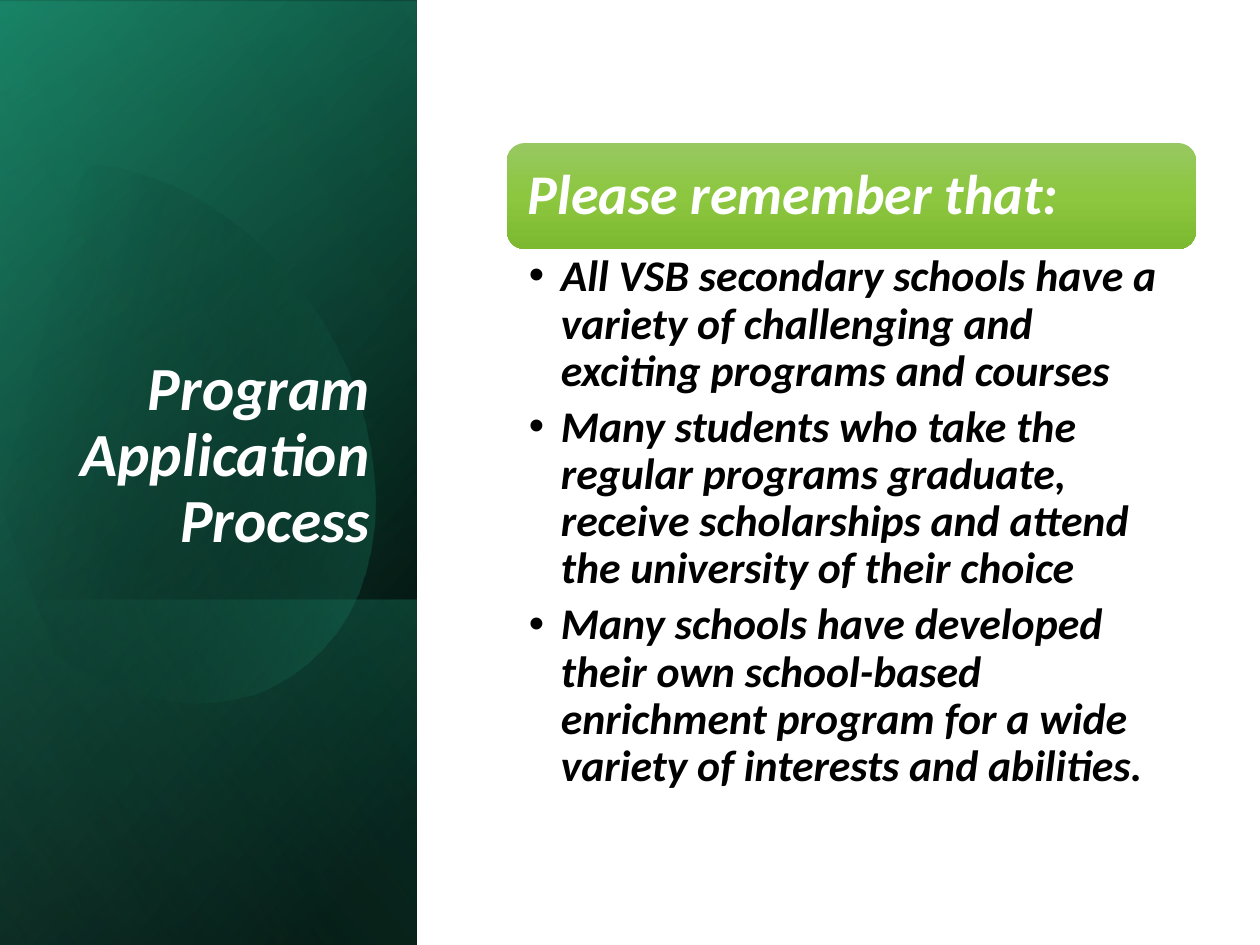
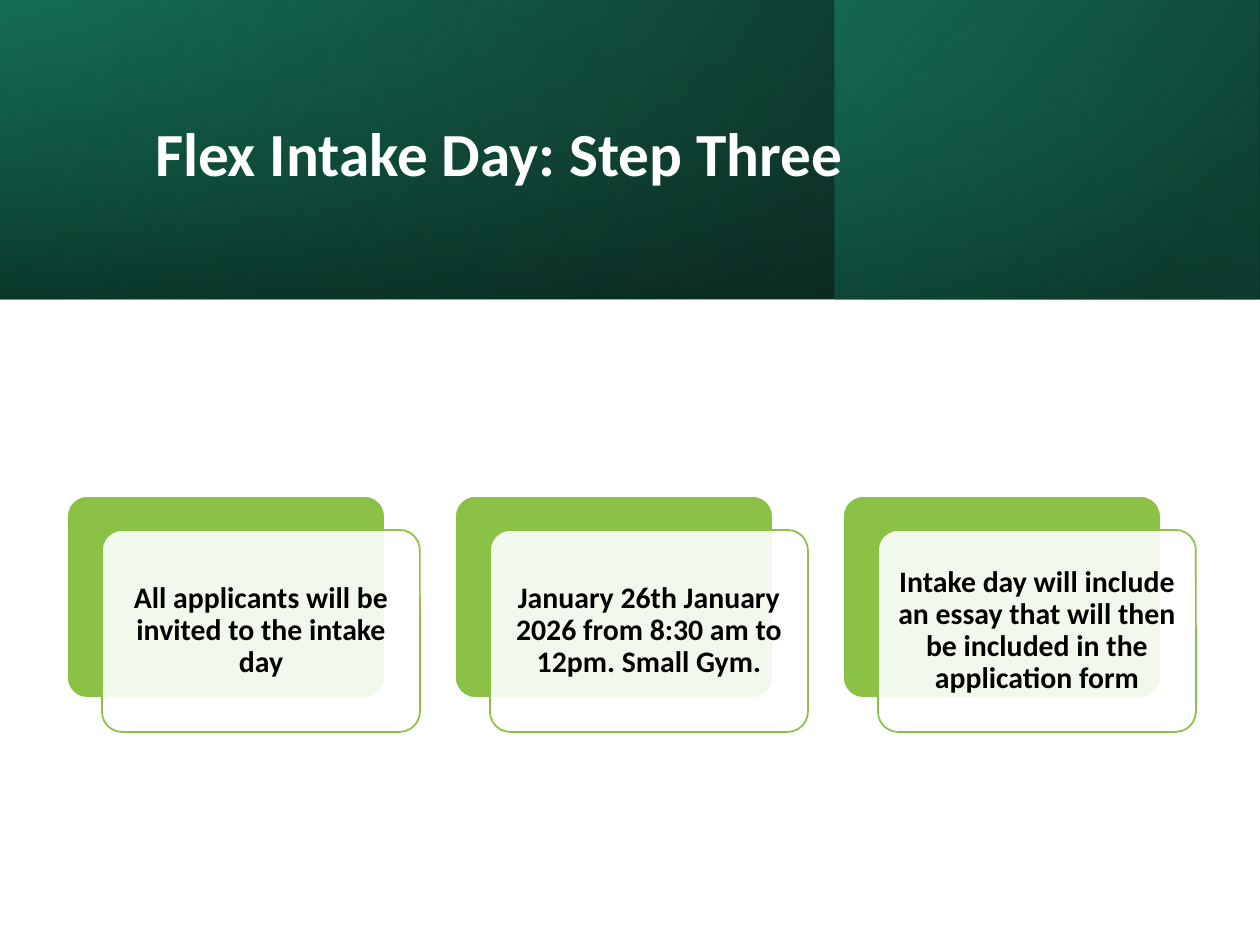
from lxml.etree import SubElement
from pptx import Presentation
from pptx.dml.color import RGBColor
from pptx.enum.shapes import MSO_SHAPE as Shape
from pptx.enum.text import MSO_ANCHOR as Anchor, PP_ALIGN as Align
from pptx.oxml.ns import qn
from pptx.util import Emu, Pt

PX = 914400 / 126
FONT = "Calibri"
COLOURS = {
    "white": "FFFFFF", "black": "000000", "pine": "16745A", "deep": "0E4D3C",
    "jade": "1D9A78", "mint": "5AE0BB", "leaf": "8BC145",
    "leaf_top": "98C862", "leaf_mid": "8CC73F", "leaf_low": "7DB831",
}
REMINDERS = [
    "All VSB secondary schools have a variety of challenging and exciting programs and courses",
    "Many students who take the regular programs graduate, receive scholarships and attend "
    "the university of their choice",
    "Many schools have developed their own school-based enrichment program for a wide "
    "variety of interests and abilities.",
]
INTAKE_FACTS = [
    "All applicants will be invited to the intake day",
    "January 26th January 2026 from 8:30 am to 12pm. Small Gym.",
    "Intake day will include an essay that will then be included in the application form",
]
# Swoosh outline: a 2-number step is a line, a 6-number step is a curve
SWOOSH_START = (121, 144)
SWOOSH_STEPS = [
    (215, 154, 307, 242, 344, 365), (387, 519, 330, 669, 215, 702),
    (144, 723, 67, 693, 9, 630), (-4, 615), (-32, 209), (-19, 194),
    (3, 172, 28, 154, 57, 149), (78, 142, 100, 141, 121, 144),
]


def px(length):
    return Emu(round(length * PX))


def colour(name):
    return RGBColor.from_string(COLOURS[name])


# Fills
def set_alpha(colour_element, percent):
    SubElement(colour_element, qn("a:alpha")).set("val", str(percent * 1000))


def fill_gradient(shape, angle, *stops):
    """Each stop is (position, colour name) or (position, colour name, opacity)."""
    shape.fill.gradient()
    gradient = shape.element.spPr.find(qn("a:gradFill"))
    for child in list(gradient):
        gradient.remove(child)
    stop_list = SubElement(gradient, qn("a:gsLst"))
    for position, name, *opacity in stops:
        stop = SubElement(stop_list, qn("a:gs"), pos=str(position * 1000))
        tint = SubElement(stop, qn("a:srgbClr"), val=COLOURS[name])
        if opacity:
            set_alpha(tint, opacity[0])
    SubElement(gradient, qn("a:lin"), ang=str(angle * 60000), scaled="0")


def fill_solid(shape, name, opacity=100):
    shape.fill.solid()
    shape.fill.fore_color.rgb = colour(name)
    if opacity < 100:
        set_alpha(shape.element.spPr.find(qn("a:solidFill"))[0], opacity)


# Shapes
def add_plain(page, kind, left, top, width, height):
    shape = page.shapes.add_shape(kind, px(left), px(top), px(width), px(height))
    shape.shadow.inherit = False
    shape.line.fill.background()
    return shape


def add_band(page, area, turn, angle, *stops):
    """Mirrored gradient band covering area once it has been turned."""
    left, top, width, height = area
    if turn % 180:
        left, top = left + (width - height) / 2, top + (height - width) / 2
        width, height = height, width
    band = add_plain(page, Shape.RECTANGLE, left, top, width, height)
    band.rotation = turn
    band.element.spPr.find(qn("a:xfrm")).set("flipH", "1")
    fill_gradient(band, angle, *stops)


def curve_points(start, step, count=16):
    anchors = [start, step[0:2], step[2:4], step[4:6]]
    for index in range(1, count + 1):
        t = index / count
        weights = ((1 - t) ** 3, 3 * t * (1 - t) ** 2, 3 * t * t * (1 - t), t ** 3)
        yield tuple(sum(w * a[axis] for w, a in zip(weights, anchors)) for axis in (0, 1))


def add_swoosh(page):
    points = [SWOOSH_START]
    for step in SWOOSH_STEPS:
        points.extend([step] if len(step) == 2 else curve_points(points[-1], step))
    builder = page.shapes.build_freeform(*SWOOSH_START, scale=PX)
    builder.add_line_segments(points[1:], close=True)
    swoosh = builder.convert_to_shape()
    swoosh.shadow.inherit = False
    swoosh.line.fill.background()
    swoosh.rotation = 343.9
    fill_gradient(swoosh, 30, (29, "black", 0), (100, "jade", 43))


def add_card_shape(page, left, top, fill, opacity, line):
    card = add_plain(page, Shape.ROUNDED_RECTANGLE, left, top, 318, 202)
    card.adjustments[0] = 0.1
    fill_solid(card, fill, opacity)
    card.line.color.rgb = colour(line)
    card.line.width = Pt(1)


# Text
def add_text(page, area, texts, size, name, italic=False, align=Align.LEFT,
             anchor=Anchor.MIDDLE, insets=(13, 6, 13, 6), bullets=False):
    box = page.shapes.add_textbox(*map(px, area))
    frame = box.text_frame
    frame.word_wrap = True
    frame.vertical_anchor = anchor
    (frame.margin_left, frame.margin_top,
     frame.margin_right, frame.margin_bottom) = map(px, insets)
    for index, text in enumerate(texts):
        para = frame.paragraphs[0] if index == 0 else frame.add_paragraph()
        para.alignment = align
        para.line_spacing = 0.9
        if bullets:
            add_bullet(para, size)
        span = para.add_run()
        span.text = text
        span.font.name = FONT
        span.font.size = Pt(size)
        span.font.bold = True
        span.font.italic = italic
        span.font.color.rgb = colour(name)


def add_bullet(para, size):
    para.space_after = Pt(size * 0.2)
    properties = para._p.get_or_add_pPr()
    properties.set("marL", str(px(32)))
    properties.set("indent", str(px(-32)))
    SubElement(properties, qn("a:buFont"), typeface="Arial")
    SubElement(properties, qn("a:buChar"), char="•")


def add_title(page, area, text, **style):
    add_text(page, area, [text], 35, "white", **style)


# Slides
def build_process(page):
    side = (0, 0, 417, 945)
    add_band(page, side, 90, 50, (8, "black"), (100, "pine"))
    add_band(page, (0, 2, 417, 945), 90, 30, (0, "black", 0), (99, "jade", 46))
    add_band(page, (0, 600, 417, 345), 90, 130, (2, "jade", 29), (100, "black", 30))
    add_swoosh(page)
    add_band(page, side, 90, 120, (0, "black", 0), (99, "mint", 11))
    add_title(page, (60, 232, 323, 330), "Program Application Process",
              italic=True, align=Align.RIGHT, anchor=Anchor.BOTTOM)

    header = add_plain(page, Shape.ROUNDED_RECTANGLE, 507, 143, 689, 106)
    fill_gradient(header, 90, (0, "leaf_top"), (50, "leaf_mid"), (100, "leaf_low"))
    add_text(page, (512, 148, 679, 96), ["Please remember that:"], 32, "white",
             italic=True, insets=(16, 16, 16, 16))
    add_text(page, (507, 249, 689, 566), REMINDERS, 25, "black", italic=True,
             anchor=Anchor.TOP, insets=(22, 5, 31, 5), bullets=True)


def build_intake(page):
    top_area = (0, 0, 1260, 299)
    add_band(page, top_area, 0, 330, (0, "black", 96), (100, "pine"))
    add_band(page, (835, 0, 424, 299), 0, 320, (19, "deep", 68), (100, "jade", 48))
    add_band(page, top_area, 270, 350, (23, "pine", 16), (99, "black", 45))
    add_title(page, (142, 48, 1004, 217), "Flex Intake Day: Step Three")

    for index, fact in enumerate(INTAKE_FACTS):
        left, top = 67 + 388 * index, 496
        add_card_shape(page, left, top, "leaf", 100, "white")
        add_card_shape(page, left + 35, top + 34, "white", 90, "leaf")
        add_text(page, (left + 41, top + 40, 306, 190), [fact], 17, "black",
                 align=Align.CENTER, insets=(9, 9, 9, 9))


def main():
    deck = Presentation()
    deck.slide_width, deck.slide_height = px(1260), px(945)
    for build in (build_process, build_intake):
        build(deck.slides.add_slide(deck.slide_layouts[6]))
    deck.save("out.pptx")


if __name__ == "__main__":
    main()
